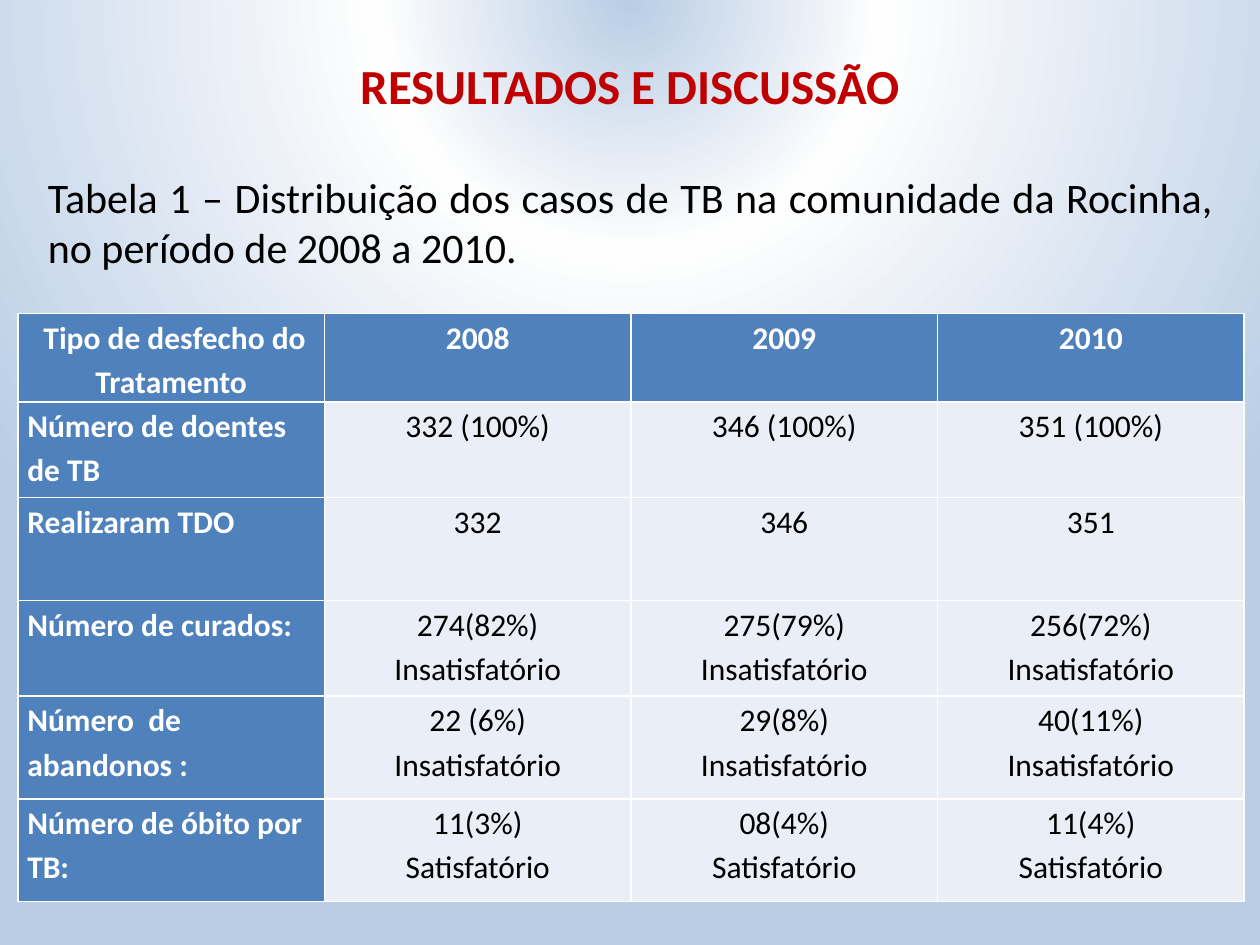
"""Build the slide with the table of tuberculosis outcomes by year."""
from typing import NamedTuple

from lxml.etree import SubElement as Sub
from pptx import Presentation
from pptx.dml.color import RGBColor
from pptx.enum.text import MSO_ANCHOR as Anchor, PP_ALIGN as Align
from pptx.oxml import parse_xml
from pptx.oxml.ns import nsdecls, qn
from pptx.util import Cm, Pt

RED, BLUE, PALE = "C00000", "4F81BD", "EAEFF7"
WHITE, BLACK, SKY, GLOW = "FFFFFF", "000000", "B9CDE5", "FEFEFE"


class Style(NamedTuple):
    size: int
    ink: str
    bold: bool = False
    align: Align = Align.CENTER


class Row(NamedTuple):
    tall: float
    label: str
    values: tuple[str, ...]
    note: str = ""


HEAD = Style(18, WHITE, True)
LABEL = Style(18, WHITE, True, Align.LEFT)
VALUE = Style(18, BLACK)
ROWS = (
    Row(1.73, " Tipo de desfecho do Tratamento", ("2008", "2009", "2010")),
    Row(1.93, "Número de doentes de TB", ("332 (100%)", "346 (100%)", "351 (100%)")),
    Row(2.07, "Realizaram TDO", ("332", "346", "351")),
    Row(1.93, "Número de curados:", ("274(82%)", "275(79%)", "256(72%)"), "Insatisfatório"),
    Row(2.07, "Número  de abandonos :", ("22 (6%)", "29(8%)", "40(11%)"), "Insatisfatório"),
    Row(2.07, "Número de óbito por TB:", ("11(3%)", "08(4%)", "11(4%)"), "Satisfatório"),
)


def color(code: str) -> RGBColor:
    return RGBColor.from_string(code)


def write(frame, lines: list[str], style: Style) -> None:
    for i, line in enumerate(lines):
        para = frame.paragraphs[0] if i == 0 else frame.add_paragraph()
        para.alignment = style.align
        run = para.add_run()
        run.text = line
        font = run.font
        font.name, font.size, font.bold = "Calibri", Pt(style.size), style.bold
        font.color.rgb = color(style.ink)


def place(shape, left: float, top: float, wide: float, tall: float) -> None:
    shape.left, shape.top = Cm(left), Cm(top)
    shape.width, shape.height = Cm(wide), Cm(tall)


def paint(slide) -> None:
    slide.background.fill.solid()
    stops = "".join(
        f'<a:gs pos="{pos * 1000}"><a:srgbClr val="{code}"/></a:gs>'
        for pos, code in ((0, SKY), (32, GLOW), (100, SKY))
    )
    glow = parse_xml(
        f'<a:gradFill {nsdecls("a")} rotWithShape="1"><a:gsLst>{stops}</a:gsLst>'
        '<a:path path="circle"><a:fillToRect l="50000" t="-80000" r="50000" b="180000"/>'
        "</a:path></a:gradFill>"
    )
    back = slide.element.find(".//" + qn("p:bgPr"))
    back.replace(back.find(qn("a:solidFill")), glow)


def edge(cell) -> None:
    props = cell._tc.get_or_add_tcPr()
    for side in "LRTB":
        line = Sub(props, qn(f"a:ln{side}"), w=str(Pt(1)))
        Sub(Sub(line, qn("a:solidFill")), qn("a:srgbClr"), val=WHITE)


def fill(cell, lines: list[str], style: Style, shade: str) -> None:
    edge(cell)
    cell.fill.solid()
    cell.fill.fore_color.rgb = color(shade)
    cell.margin_left = cell.margin_right = Cm(0.19)
    cell.margin_top = cell.margin_bottom = 0
    cell.vertical_anchor = Anchor.TOP
    write(cell.text_frame, lines, style)
    for para in cell.text_frame.paragraphs:
        para.line_spacing = 1.15


def tabulate(slide, rows: tuple[Row, ...]) -> None:
    count = len(rows[0].values) + 1
    tall = sum(row.tall for row in rows)
    table = slide.shapes.add_table(
        len(rows), count, Cm(0.36), Cm(6.32), Cm(6.18 * count), Cm(tall)
    ).table
    for i, row in enumerate(rows):
        table.rows[i].height = Cm(row.tall)
        top = i == 0
        fill(table.cell(i, 0), [row.label], HEAD if top else LABEL, BLUE)
        for j, value in enumerate(row.values, 1):
            lines = [value, row.note] if row.note else [value]
            fill(table.cell(i, j), lines, HEAD if top else VALUE, BLUE if top else PALE)


def main() -> None:
    deck = Presentation()
    deck.slide_width, deck.slide_height = Cm(25.4), Cm(19.05)
    slide = deck.slides.add_slide(deck.slide_layouts[1])
    paint(slide)
    title, body = slide.placeholders
    place(title, 1.27, 0.13, 22.86, 3.18)
    title.text_frame.vertical_anchor = Anchor.MIDDLE
    write(title.text_frame, ["RESULTADOS E DISCUSSÃO"], Style(28, RED, True))
    place(body, 0.71, 3.33, 24, 2.31)
    caption = (
        "Tabela 1 – Distribuição dos casos de TB na comunidade da Rocinha, "
        "no período de 2008 a 2010."
    )
    write(body.text_frame, [caption], Style(24, BLACK, align=Align.JUSTIFY))
    props = body.text_frame.paragraphs[0]._p.get_or_add_pPr()
    props.set("marL", "0")
    props.set("indent", "0")
    Sub(props, qn("a:buNone"))
    tabulate(slide, ROWS)
    deck.save("out.pptx")


if __name__ == "__main__":
    main()
